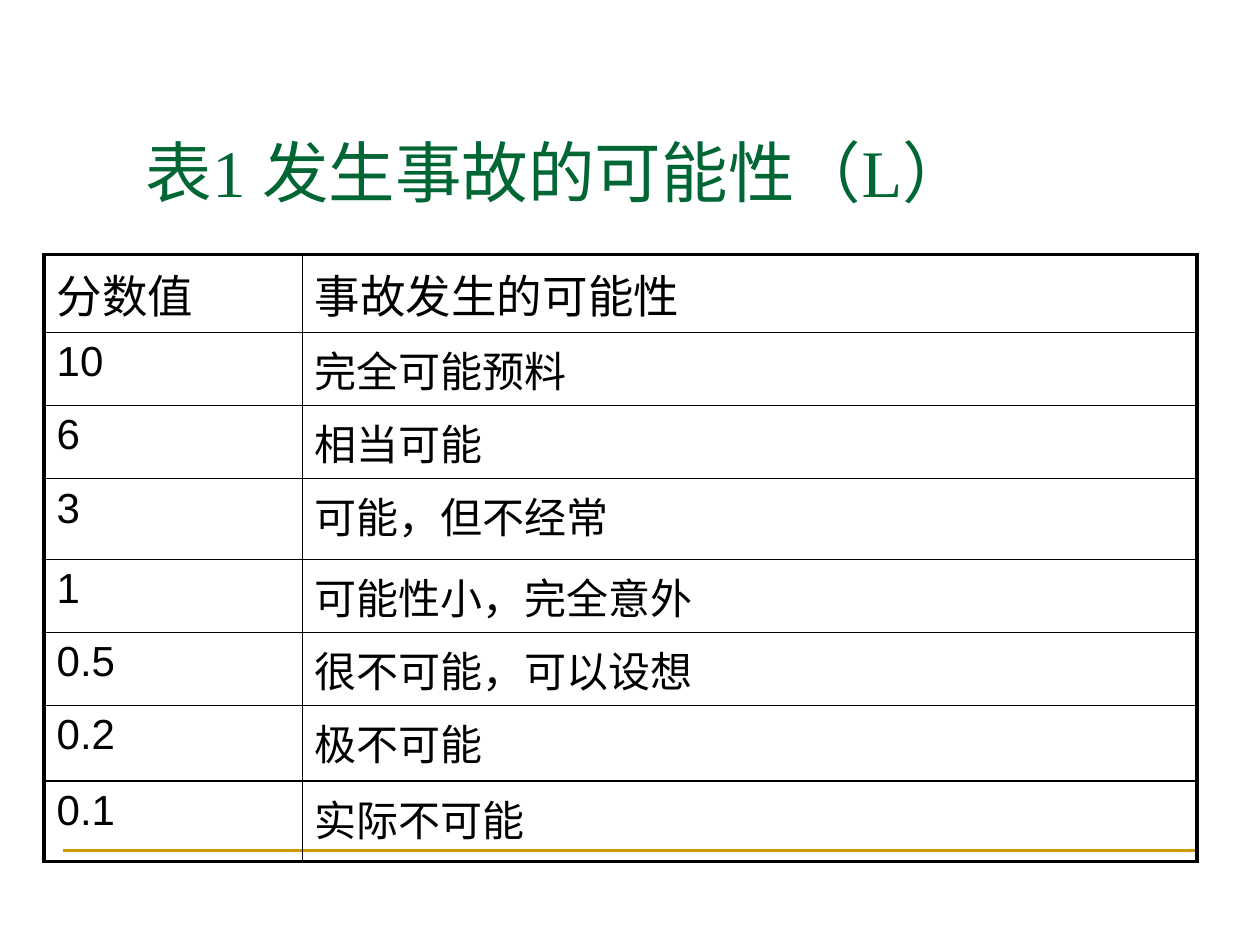
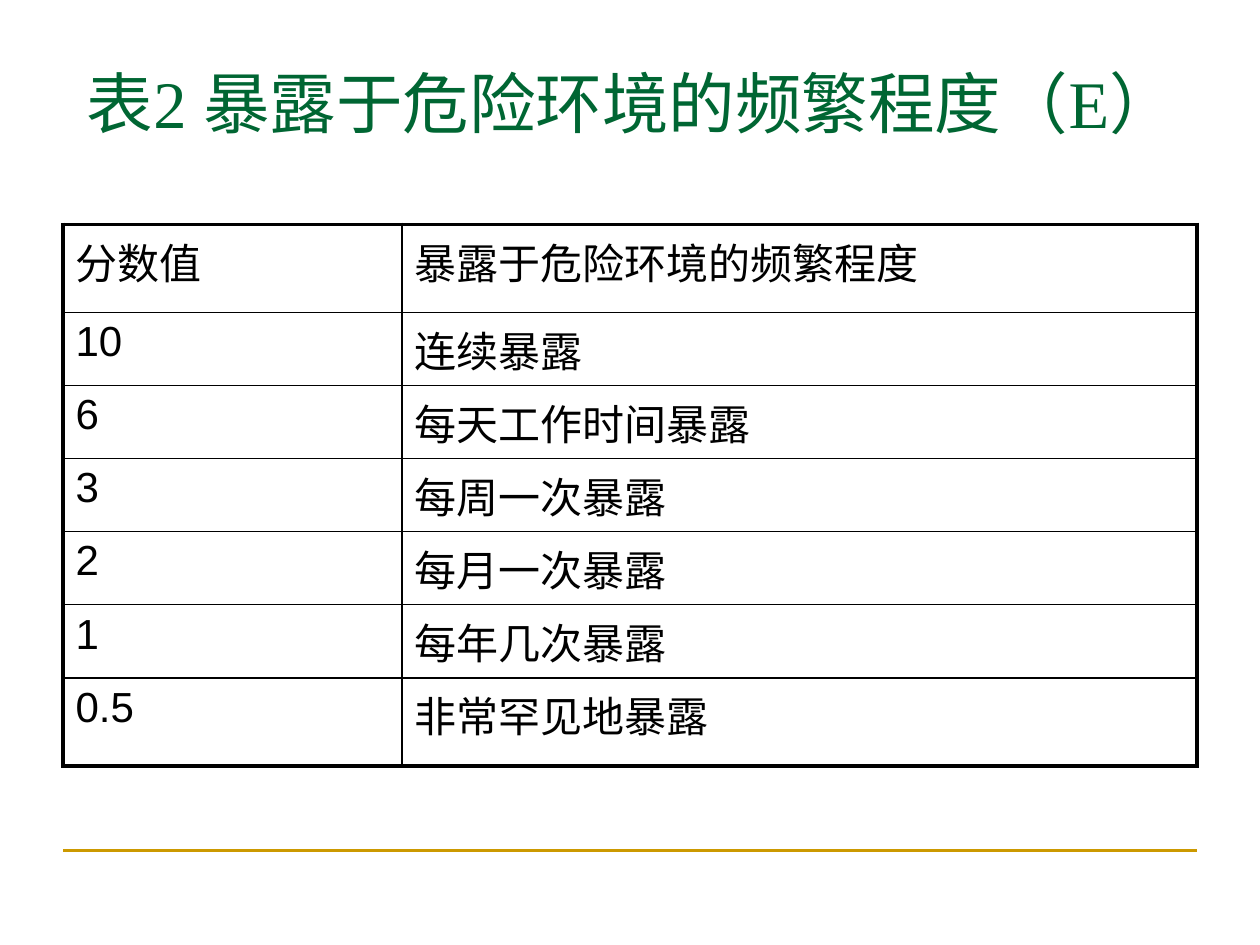
import pptx
import pptx.util
import pptx.dml.color
import pptx.oxml
import pptx.oxml.ns
import lxml.etree

Inches = pptx.util.Inches
Pt = pptx.util.Pt
qn = pptx.oxml.ns.qn

GREEN = "006633"
GOLD = "CC9900"
BLACK = "000000"
THIN = 1
THICK = 2.25


def color(code):
    return pptx.dml.color.RGBColor.from_string(code)


def style(font, name, size, code):
    font.name = name
    font.size = Pt(size)
    font.color.rgb = color(code)


def add_title(slide, box, text):
    frame = slide.shapes.add_textbox(*map(Inches, box)).text_frame
    frame.word_wrap = True
    frame.text = text
    style(frame.paragraphs[0].font, "Times New Roman", 38, GREEN)


def add_rule(slide, left, top, width):
    rule = slide.shapes.add_connector(
        pptx.enum.shapes.MSO_CONNECTOR.STRAIGHT,
        Inches(left), Inches(top), Inches(left + width), Inches(top))
    rule.line.color.rgb = color(GOLD)
    rule.line.width = Pt(1.5)
    lxml.etree.SubElement(rule._element.spPr, qn("a:effectLst"))


def add_edges(cell, widths):
    props = cell._tc.get_or_add_tcPr()
    for place, (side, width) in enumerate(widths.items()):
        edge = lxml.etree.Element(qn("a:ln" + side), w=str(Pt(width)))
        fill = lxml.etree.SubElement(edge, qn("a:solidFill"))
        lxml.etree.SubElement(fill, qn("a:srgbClr"), val=BLACK)
        props.insert(place, edge)


def add_scale(slide, left, top, cols, heights, rows, head_size):
    last = len(rows) - 1
    table = slide.shapes.add_table(
        len(rows), len(cols), Inches(left), Inches(top),
        Inches(sum(cols)), Inches(sum(heights))).table
    table.first_row = table.horz_banding = False
    for col, width in zip(table.columns, cols):
        col.width = Inches(width)
    for r, (texts, height) in enumerate(zip(rows, heights)):
        table.rows[r].height = Inches(height)
        for c, text in enumerate(texts):
            cell = table.cell(r, c)
            cell.text = text
            cell.fill.background()
            size = head_size if r == 0 else 24
            style(cell.text_frame.paragraphs[0].font, "Arial", size, BLACK)
            add_edges(cell, {
                "L": THICK if c == 0 else THIN,
                "R": THICK if c == len(cols) - 1 else THIN,
                "T": THICK if r == 0 else THIN,
                "B": THICK if r == last else THIN})


def add_page(deck, title, box, **scale):
    slide = deck.slides.add_slide(deck.slide_layouts[6])
    add_rule(slide, 0.5, 6.75, 9)
    add_title(slide, box, title)
    add_scale(slide, **scale)


def main():
    deck = pptx.Presentation()
    deck.slide_width = Inches(10)
    deck.slide_height = Inches(7.5)
    add_page(
        deck, "表1 发生事故的可能性（L）", (1.06, 0.99, 7.94, 0.56),
        left=0.35, top=2.02, cols=[2.05, 7.1], head_size=26,
        heights=[0.62, 0.58, 0.58, 0.64, 0.58, 0.58, 0.6, 0.64],
        rows=[
            ("分数值", "事故发生的可能性"),
            ("10", "完全可能预料"),
            ("6", "相当可能"),
            ("3", "可能，但不经常"),
            ("1", "可能性小，完全意外"),
            ("0.5", "很不可能，可以设想"),
            ("0.2", "极不可能"),
            ("0.1", "实际不可能")])
    add_page(
        deck, "表2 暴露于危险环境的频繁程度（E）", (0.59, 0.44, 8.9, 0.63),
        left=0.5, top=1.78, cols=[2.69, 6.31], head_size=24,
        heights=[0.7] + [0.58] * 5 + [0.7],
        rows=[
            ("分数值", "暴露于危险环境的频繁程度"),
            ("10", "连续暴露"),
            ("6", "每天工作时间暴露"),
            ("3", "每周一次暴露"),
            ("2", "每月一次暴露"),
            ("1", "每年几次暴露"),
            ("0.5", "非常罕见地暴露")])
    deck.save("out.pptx")


if __name__ == "__main__":
    main()
